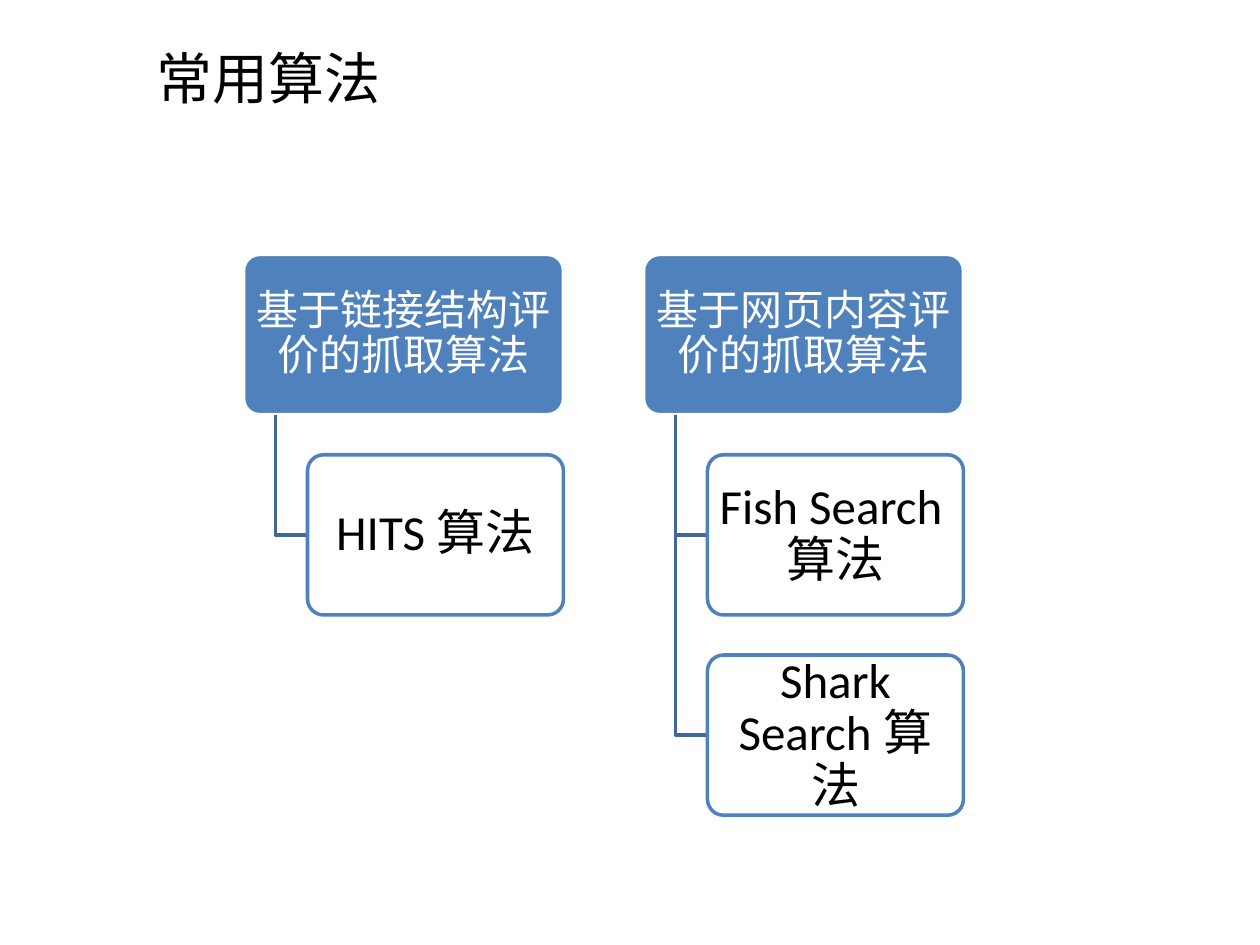
from lxml.etree import SubElement
from pptx import Presentation
from pptx.dml.color import RGBColor
from pptx.enum.shapes import MSO_SHAPE
from pptx.enum.text import MSO_ANCHOR, MSO_AUTO_SIZE, PP_ALIGN
from pptx.oxml.ns import qn
from pptx.util import Cm, Pt

BLACK = RGBColor(0x00, 0x00, 0x00)
WHITE = RGBColor(0xFF, 0xFF, 0xFF)
BLUE = RGBColor(0x4F, 0x81, 0xBD)
DARK_BLUE = RGBColor(0x3F, 0x67, 0x97)

FAMILIES = [
    ("基于链接结构评价的抓取算法", ["HITS算法"]),
    ("基于网页内容评价的抓取算法", ["Fish Search算法", "Shark Search算法"]),
]

# All lengths below are centimetres; the spacing follows from the head box.
LEFT, TOP = 4.91, 5.13
HEAD_WIDTH, BOX_HEIGHT = 6.45, 3.23
COLUMN_PITCH = HEAD_WIDTH * 1.25
ROW_PITCH = BOX_HEIGHT * 1.25
TRUNK_INDENT = HEAD_WIDTH * 0.1
CHILD_INDENT = HEAD_WIDTH * 0.2
CHILD_WIDTH = HEAD_WIDTH * 0.8


def write_text(frame, text, size, color, align=PP_ALIGN.CENTER,
               anchor=MSO_ANCHOR.MIDDLE, line_spacing=None):
    frame.word_wrap = True
    frame.vertical_anchor = anchor
    paragraph = frame.paragraphs[0]
    paragraph.alignment = align
    paragraph.line_spacing = line_spacing
    run = paragraph.add_run()
    run.text = text
    run.font.name = "Calibri"
    run.font.size = Pt(size)
    run.font.color.rgb = color


def set_opacity(fill_color, percent, shape):
    """Fill the shape with a colour that lets some background through."""
    shape.fill.solid()
    shape.fill.fore_color.rgb = fill_color
    color = shape.element.spPr.find(qn("a:solidFill"))[0]
    if percent < 100:
        SubElement(color, qn("a:alpha"), val=str(percent * 1000))


def add_box(slide, text, left, top, width, size, color, fill, line,
            inset_x, inset_y, opacity=100):
    box = slide.shapes.add_shape(MSO_SHAPE.ROUNDED_RECTANGLE, Cm(left), Cm(top),
                                 Cm(width), Cm(BOX_HEIGHT))
    box.adjustments[0] = 0.1
    box.shadow.inherit = False
    set_opacity(fill, opacity, box)
    box.line.color.rgb = line
    box.line.width = Pt(2)
    frame = box.text_frame
    frame.margin_left = frame.margin_right = Cm(inset_x)
    frame.margin_top = frame.margin_bottom = Cm(inset_y)
    write_text(frame, text, size, color, line_spacing=0.9)


def add_branch(slide, trunk_x, start_y, end_x, end_y):
    """Draw the angled line from a head box down and across to a child."""
    builder = slide.shapes.build_freeform(Cm(trunk_x), Cm(start_y))
    builder.add_line_segments([(Cm(trunk_x), Cm(end_y)), (Cm(end_x), Cm(end_y))],
                              close=False)
    branch = builder.convert_to_shape()
    branch.shadow.inherit = False
    branch.fill.background()
    branch.line.color.rgb = DARK_BLUE
    branch.line.width = Pt(2)


def add_family(slide, left, head, children):
    add_box(slide, head, left, TOP, HEAD_WIDTH, 24, WHITE, BLUE, WHITE, 0.13, 0.08)
    child_left = left + CHILD_INDENT
    for row, child in enumerate(children, start=1):
        child_top = TOP + row * ROW_PITCH
        add_branch(slide, left + TRUNK_INDENT, TOP + BOX_HEIGHT,
                   child_left, child_top + BOX_HEIGHT / 2)
        add_box(slide, child, child_left, child_top, CHILD_WIDTH, 28, BLACK,
                WHITE, BLUE, 0.15, 0.1, opacity=90)


def add_title(slide, text):
    title = slide.shapes.title
    title.left, title.top = Cm(2.9), Cm(0.74)
    title.width, title.height = Cm(12.8), Cm(1.63)
    write_text(title.text_frame, text, 32, BLACK, PP_ALIGN.LEFT, MSO_ANCHOR.TOP)
    title.text_frame.auto_size = MSO_AUTO_SIZE.SHAPE_TO_FIT_TEXT


def main():
    presentation = Presentation()
    presentation.slide_width, presentation.slide_height = Cm(25.4), Cm(19.05)
    slide = presentation.slides.add_slide(presentation.slide_layouts[5])
    add_title(slide, "常用算法")
    for column, (head, children) in enumerate(FAMILIES):
        add_family(slide, LEFT + column * COLUMN_PITCH, head, children)
    presentation.save("out.pptx")


if __name__ == "__main__":
    main()
